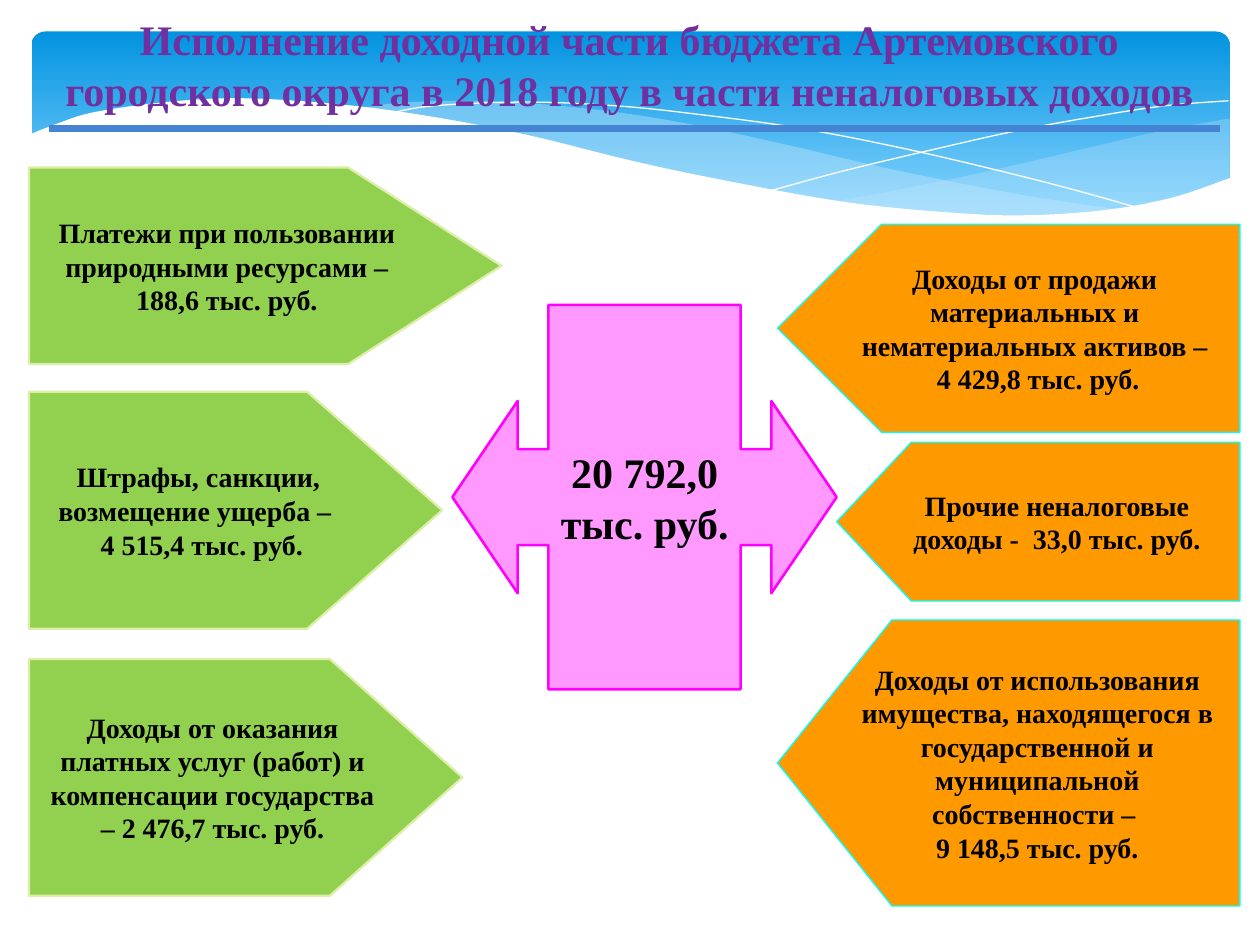
"""Builds a slide on the non-tax revenue of a city district budget."""
from lxml.etree import SubElement
from pptx import Presentation
from pptx.dml.color import RGBColor
from pptx.enum.shapes import MSO_CONNECTOR as Connector, MSO_SHAPE as Shape
from pptx.enum.text import MSO_ANCHOR as Anchor, PP_ALIGN as Align
from pptx.oxml.ns import qn
from pptx.util import Inches, Pt

FONT = "Times New Roman"
COLORS = {
    "sky_top": "0293E0", "sky_bottom": "83D3FE", "haze": "C6E7FC", "white": "FFFFFF",
    "title": "7030A0", "rule": "4584D3", "text": "000000",
    "total": "FF99FF", "total_edge": "FF00FF",
    "left": "92D050", "left_edge": "DCEEA7", "right": "FF9900", "right_edge": "00FFFF",
}
TITLE = "Исполнение доходной части бюджета Артемовского городского округа в 2018 году в части неналоговых доходов"
TOTAL = ["20 792,0", "тыс. руб."]

# Plates: left, top, width, height, point, paragraphs
LEFT_PLATES = [
    (0.23, 1.33, 3.75, 1.56, 0.78, ["Платежи при пользовании природными ресурсами – 188,6 тыс. руб."]),
    (0.23, 3.11, 3.28, 1.88, 0.57, ["Штрафы, санкции, ", "возмещение ущерба –  ", "4 515,4 тыс. руб."]),
    (0.23, 5.23, 3.44, 1.88, 0.56,
     ["Доходы от оказания платных услуг (работ) и компенсации государства – 2 476,7 тыс. руб."]),
]
RIGHT_PLATES = [
    (6.17, 1.78, 3.67, 1.65, 0.5,
     ["Доходы от продажи материальных и нематериальных активов –", " 4 429,8 тыс. руб."]),
    (6.64, 3.51, 3.2, 1.26, 0.47, ["Прочие неналоговые доходы -  33,0 тыс. руб."]),
    (6.17, 4.92, 3.67, 2.27, 0.4,
     ["Доходы от использования имущества, находящегося в государственной и муниципальной собственности – ",
      "9 148,5 тыс. руб."]),
]

HAZES = [
    (29, [[(9.76, 0.94), (9.21, 1.04), (8.61, 1.18), (7.79, 1.37), (7.06, 1.52), (6.61, 1.6)],
          [(6.61, 1.6), (7.18, 1.67), (7.81, 1.72), (8.35, 1.72), (8.89, 1.66), (9.35, 1.56), (9.76, 1.41)]]),
    (40, [[(8.93, 1.67), (8.07, 1.54), (7.06, 1.34), (6.29, 1.16), (5.55, 1), (4.89, 0.89),
           (4.2, 0.82), (3.61, 0.8), (3.13, 0.82), (2.86, 0.86)],
          [(2.86, 0.86), (3.62, 0.97), (4.49, 1.16), (5.3, 1.35), (6.01, 1.5), (6.8, 1.63),
           (7.48, 1.7), (8.18, 1.73), (8.57, 1.71), (8.93, 1.67)]]),
]
THREADS = [
    [(3.09, 0.9), (3.44, 0.84), (4.16, 0.81), (4.89, 0.84), (5.56, 0.91), (6.36, 1.02),
     (7.27, 1.2), (8.31, 1.45), (9.07, 1.66)],
    [(6.13, 1.51), (6.72, 1.35), (7.48, 1.17), (8.06, 1.04), (8.66, 0.93), (9.24, 0.84), (9.75, 0.8)],
]
PAPER = [
    [(9.77, 1.41), (9.3, 1.57), (8.75, 1.67), (8.09, 1.71), (7.44, 1.68), (6.68, 1.6), (5.79, 1.44),
     (5.03, 1.28), (4.18, 1.07), (3.39, 0.92), (2.71, 0.83), (1.93, 0.78), (1.32, 0.81),
     (0.75, 0.89), (0.46, 0.98), (0.23, 1.07)],
    [(0.23, 2.24), (9.77, 2.24)],
]


def rgb(name):
    return RGBColor.from_string(COLORS[name])


def smooth(points, steps=5):
    if len(points) < 3:
        return points
    padded = [points[0], *points, points[-1]]
    curve = []
    for a, b, c, d in zip(padded, padded[1:], padded[2:], padded[3:]):
        for step in range(steps):
            t = step / steps
            curve.append(tuple(
                q + t * (r - p + t * (2 * p - 5 * q + 4 * r - s + t * (3 * q - p - 3 * r + s))) / 2
                for p, q, r, s in zip(a, b, c, d)))
    return curve + [points[-1]]


def add_wave(page, curves, fill=None, alpha=100):
    points = [(Inches(x), Inches(y)) for curve in curves for x, y in smooth(curve)]
    builder = page.shapes.build_freeform(*points[0])
    builder.add_line_segments(points[1:], close=fill is not None)
    wave = builder.convert_to_shape()
    wave.shadow.inherit = False
    if fill:
        wave.fill.solid()
        wave.fill.fore_color.rgb = rgb(fill)
        wave.line.fill.background()
        if alpha < 100:
            color = wave.fill._xPr.find(qn("a:solidFill"))[0]
            SubElement(color, qn("a:alpha"), val=str(alpha * 1000))
    else:
        wave.fill.background()
        wave.line.color.rgb = rgb("white")
        wave.line.width = Pt(0)


def write(box, lines, size, color="text"):
    frame = box.text_frame
    frame.word_wrap = True
    frame.vertical_anchor = Anchor.MIDDLE
    for index, line in enumerate(lines):
        para = frame.add_paragraph() if index else frame.paragraphs[0]
        para.alignment = Align.CENTER
        span = para.add_run()
        span.text = line
        span.font.size, span.font.name, span.font.bold = Pt(size), FONT, True
        span.font.color.rgb = rgb(color)


def add_block(page, kind, place, adjustments, fill, edge_width, lines, size):
    block = page.shapes.add_shape(kind, *map(Inches, place))
    for index, value in enumerate(adjustments):
        block.adjustments[index] = value
    block.shadow.inherit = False
    block.fill.solid()
    block.fill.fore_color.rgb = rgb(fill)
    block.line.color.rgb = rgb(fill + "_edge")
    block.line.width = Pt(edge_width)
    write(block, lines, size)
    return block


def add_background(page):
    sky = page.shapes.add_shape(Shape.ROUNDED_RECTANGLE, *map(Inches, (0.25, 0.25, 9.51, 1.56)))
    sky.adjustments[0] = 0.07
    sky.shadow.inherit = False
    sky.line.fill.background()
    sky.fill.gradient()
    sky.fill.gradient_angle = 270
    for stop, name, position in zip(sky.fill.gradient_stops, ("sky_top", "sky_bottom"), (0, 0.9)):
        stop.color.rgb = rgb(name)
        stop.position = position
    for alpha, curves in HAZES:
        add_wave(page, curves, "haze", alpha)
    for thread in THREADS:
        add_wave(page, [thread])
    add_wave(page, PAPER, "white")


def main():
    deck = Presentation()
    deck.slide_width, deck.slide_height = Inches(10), Inches(7.5)
    page = deck.slides.add_slide(deck.slide_layouts[6])
    add_background(page)

    title = page.shapes.add_textbox(*map(Inches, (0.23, 0, 9.53, 1.02)))
    write(title, [TITLE], 24, "title")

    total = add_block(page, Shape.UP_DOWN_ARROW_CALLOUT, (3.59, 2.42, 3.05, 3.05),
                      (0.25, 0.25, 0.17, 0.5), "total", 1.5, TOTAL, 24)
    total.rotation = 270
    total.text_frame.word_wrap = False
    total.text_frame._txBody.bodyPr.set("vert", "eaVert")

    rule = page.shapes.add_connector(Connector.STRAIGHT, *map(Inches, (0.39, 1.02, 9.68, 1.02)))
    rule.line.color.rgb = rgb("rule")
    rule.line.width = Pt(3.75)
    SubElement(rule._element.spPr, qn("a:effectLst"))

    for side, edge_width, plates in (("left", 1.25, LEFT_PLATES), ("right", 0.75, RIGHT_PLATES)):
        for *place, point, lines in plates:
            plate = add_block(page, Shape.PENTAGON, place, [point], side, edge_width, lines, 16)
            if side == "right":
                plate.rotation = 180
                plate.text_frame._txBody.bodyPr.set("rot", "10800000")

    deck.save("out.pptx")


if __name__ == "__main__":
    main()
